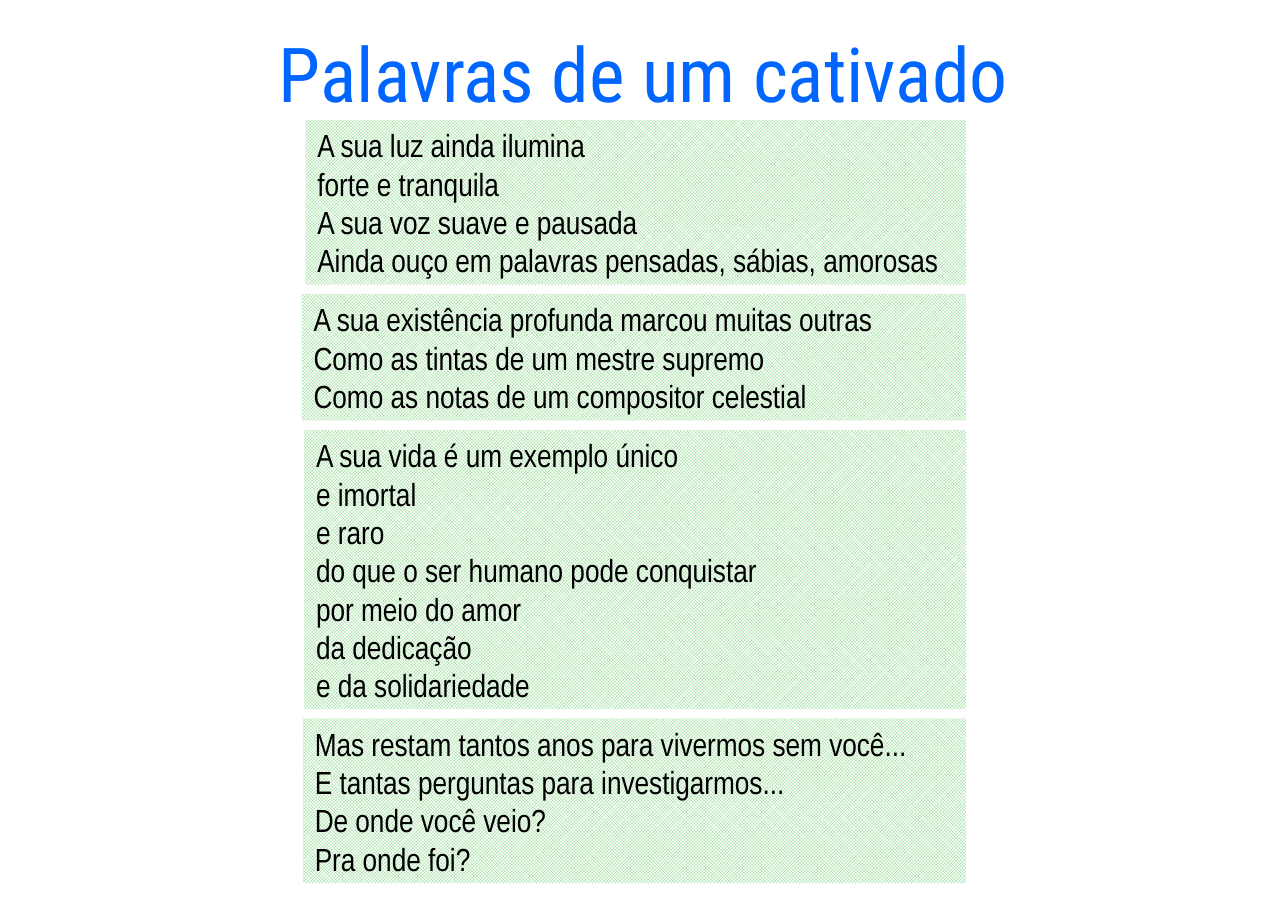
"""Builds the poem slide "Palavras de um cativado"."""
from pptx import Presentation
from pptx import util as u
from pptx.dml.color import RGBColor
from pptx.enum import dml, shapes, text

BLUE = RGBColor(0x00, 0x66, 0xFF)
GREEN = RGBColor(0x81, 0xD5, 0x81)
WHITE = RGBColor(0xFF, 0xFF, 0xFF)
BLACK = RGBColor(0x00, 0x00, 0x00)

SLIDE_WIDTH, SLIDE_HEIGHT = u.Inches(10.63), u.Inches(7.48)
VERSE_ROW = u.Inches(0.315)
PADDING = u.Inches(0.1)
STANZA_GAP = u.Inches(0.077)
STANZAS_TOP = u.Inches(0.99)
STANZAS_RIGHT = SLIDE_WIDTH * 0.75

STANZAS = [
    (2.52, ["A sua luz ainda ilumina",
            "forte e tranquila",
            "A sua voz suave e pausada",
            "Ainda ouço em palavras pensadas, sábias, amorosas"]),
    (2.49, ["A sua existência profunda marcou muitas outras",
            "Como as tintas de um mestre supremo",
            "Como as notas de um compositor celestial"]),
    (2.51, ["A sua vida é um exemplo único",
            "e imortal",
            "e raro",
            "do que o ser humano pode conquistar",
            "por meio do amor",
            "da dedicação",
            "e da solidariedade"]),
    (2.5, ["Mas restam tantos anos para vivermos sem você...",
           "E tantas perguntas para investigarmos...",
           "De onde você veio?",
           "Pra onde foi?"]),
]


def write(frame, words, font, size, color, align, wrap):
    """Fill a text frame with one paragraph, its lines parted by breaks."""
    frame.word_wrap = wrap
    frame.auto_size = text.MSO_AUTO_SIZE.SHAPE_TO_FIT_TEXT
    frame.vertical_anchor = text.MSO_ANCHOR.TOP
    paragraph = frame.paragraphs[0]
    paragraph.text = words
    paragraph.alignment = align
    for run in paragraph.runs:
        run.font.name = font
        run.font.size = u.Pt(size)
        run.font.color.rgb = color


def add_title(slide, words):
    """Add the centred title at the top of the slide."""
    title = slide.shapes.add_textbox(u.Inches(2.1), u.Inches(0.17),
                                     u.Inches(6.42), u.Inches(0.85))
    write(title.text_frame, words, "Roboto Condensed", 45, BLUE,
          text.PP_ALIGN.CENTER, False)


def add_stanza(slide, left, top, verses):
    """Add a checked panel with its verses and return its bottom edge."""
    height = PADDING + VERSE_ROW * len(verses)
    panel = slide.shapes.add_shape(shapes.MSO_SHAPE.RECTANGLE, left, top,
                                   int(STANZAS_RIGHT - left), height)
    panel.shadow.inherit = False
    panel.line.fill.background()
    panel.fill.patterned()
    panel.fill.pattern = dml.MSO_PATTERN.SMALL_CHECKER_BOARD
    panel.fill.fore_color.rgb = GREEN
    panel.fill.back_color.rgb = WHITE
    write(panel.text_frame, "\v".join(verses), "Arial Narrow", 19, BLACK,
          text.PP_ALIGN.LEFT, True)
    return top + height


def main():
    """Build the slide and save it."""
    deck = Presentation()
    deck.slide_width, deck.slide_height = SLIDE_WIDTH, SLIDE_HEIGHT
    slide = deck.slides.add_slide(deck.slide_layouts[6])
    add_title(slide, "Palavras de um cativado")
    top = STANZAS_TOP
    for left, verses in STANZAS:
        top = add_stanza(slide, u.Inches(left), top, verses) + STANZA_GAP
    deck.save("out.pptx")


if __name__ == "__main__":
    main()
